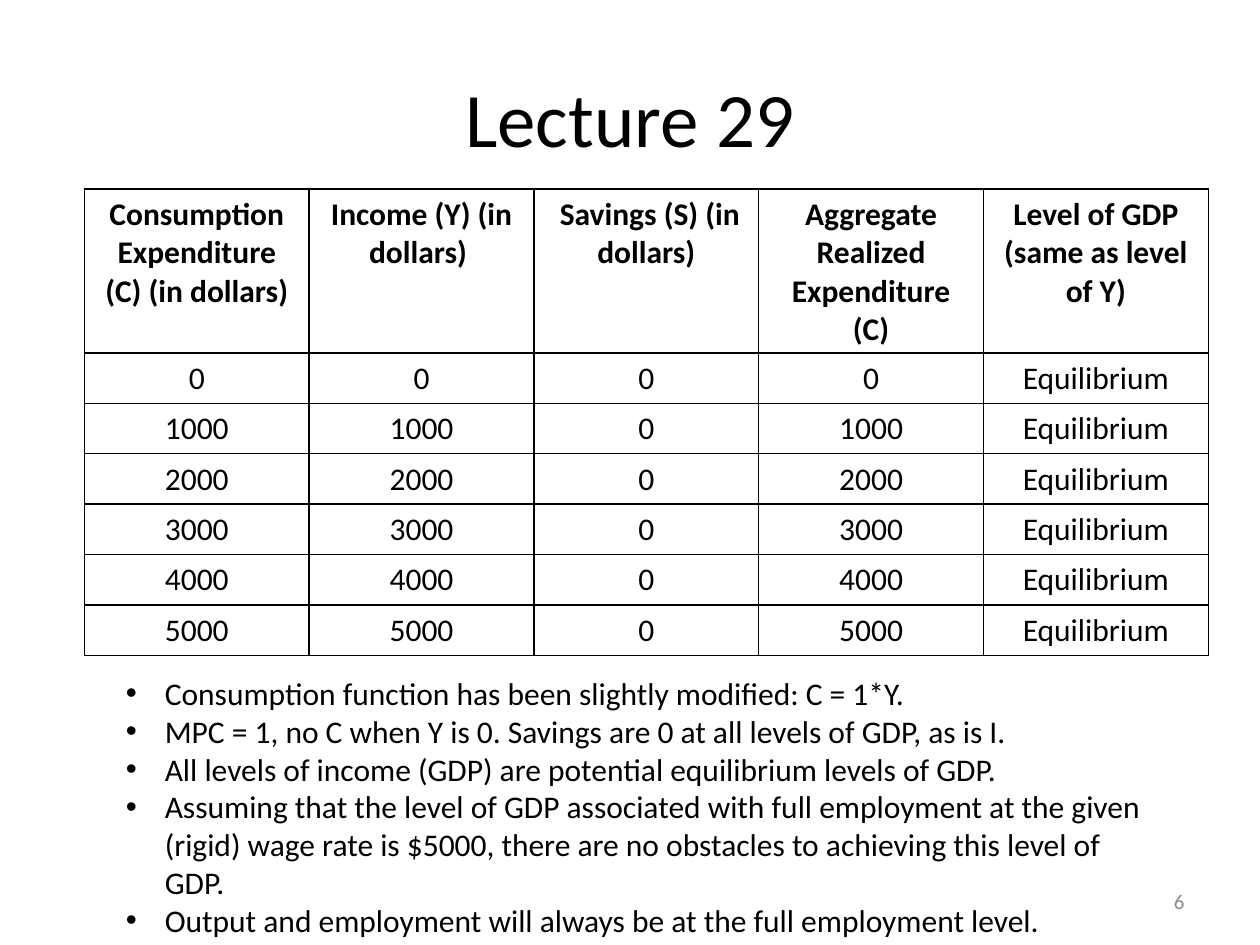
"""Build the Lecture 29 slide with its income table and notes."""
from lxml.etree import SubElement
from pptx import Presentation
from pptx.dml.color import RGBColor
from pptx.enum.text import MSO_ANCHOR, PP_ALIGN
from pptx.oxml.ns import qn
from pptx.util import Inches, Pt

COLORS = {"text": "000000", "border": "000000", "number": "8C8C8C"}
HEADINGS = [
    "Consumption Expenditure (C) (in dollars)",
    "Income (Y) (in dollars) ",
    " Savings (S) (in dollars)",
    "Aggregate Realized Expenditure (C)",
    "Level of GDP (same as level of Y)",
]
NOTES = [
    "Consumption function has been slightly modified: C = 1*Y.",
    "MPC = 1, no C when Y is 0. Savings are 0 at all levels of GDP, as is I.",
    "All levels of income (GDP) are potential equilibrium levels of GDP.",
    "Assuming that the level of GDP associated with full employment at the given "
    "(rigid) wage rate is $5000, there are no obstacles to achieving this level of GDP.",
    "Output and employment will always be at the full employment level.",
]


def write(paragraph, text, size, align, color="text", bold=False):
    paragraph.text = text
    paragraph.alignment = align
    paragraph.font.name = "Calibri"
    paragraph.font.size = Pt(size)
    paragraph.font.bold = bold
    paragraph.font.color.rgb = RGBColor.from_string(COLORS[color])


def add_box(left, top, width, height, anchor):
    frame = page.shapes.add_textbox(
        Inches(left), Inches(top), Inches(width), Inches(height)
    ).text_frame
    frame.word_wrap = True
    frame.vertical_anchor = anchor
    return frame


deck = Presentation()
deck.slide_width, deck.slide_height = Inches(10), Inches(7.5)
page = deck.slides.add_slide(deck.slide_layouts[6])

title = add_box(0.5, 0.3, 9, 1.25, MSO_ANCHOR.MIDDLE)
write(title.paragraphs[0], "Lecture 29", 44, PP_ALIGN.CENTER)

levels = range(0, 6000, 1000)
rows = [HEADINGS] + [[str(y), str(y), "0", str(y), "Equilibrium"] for y in levels]
table = page.shapes.add_table(
    len(rows), len(HEADINGS), Inches(0.67), Inches(1.5), Inches(8.92), Inches(3.7)
).table
for row_index, values in enumerate(rows):
    is_heading = row_index == 0
    table.rows[row_index].height = Inches(1.26 if is_heading else 0.39)
    for column_index, value in enumerate(values):
        cell = table.cell(row_index, column_index)
        write(cell.text_frame.paragraphs[0], value, 18, PP_ALIGN.CENTER, bold=is_heading)
        properties = cell._tc.get_or_add_tcPr()
        for side in ("lnL", "lnR", "lnT", "lnB"):
            line = SubElement(properties, qn(f"a:{side}"), w=str(Pt(1)))
            fill = SubElement(line, qn("a:solidFill"))
            SubElement(fill, qn("a:srgbClr"), val=COLORS["border"])
        cell.fill.background()

notes = add_box(0.9, 5.3, 8.27, 2.52, MSO_ANCHOR.TOP)
for index, note in enumerate(NOTES):
    paragraph = notes.paragraphs[0] if index == 0 else notes.add_paragraph()
    properties = paragraph._p.get_or_add_pPr()
    properties.set("marL", str(Inches(0.31)))
    properties.set("indent", str(-Inches(0.31)))
    SubElement(properties, qn("a:buFont"), typeface="Arial")
    SubElement(properties, qn("a:buChar"), char="•")
    write(paragraph, note, 18, PP_ALIGN.LEFT)

number = add_box(7.17, 6.95, 2.33, 0.4, MSO_ANCHOR.MIDDLE)
write(number.paragraphs[0], "6", 12, PP_ALIGN.RIGHT, "number")

deck.save("out.pptx")
